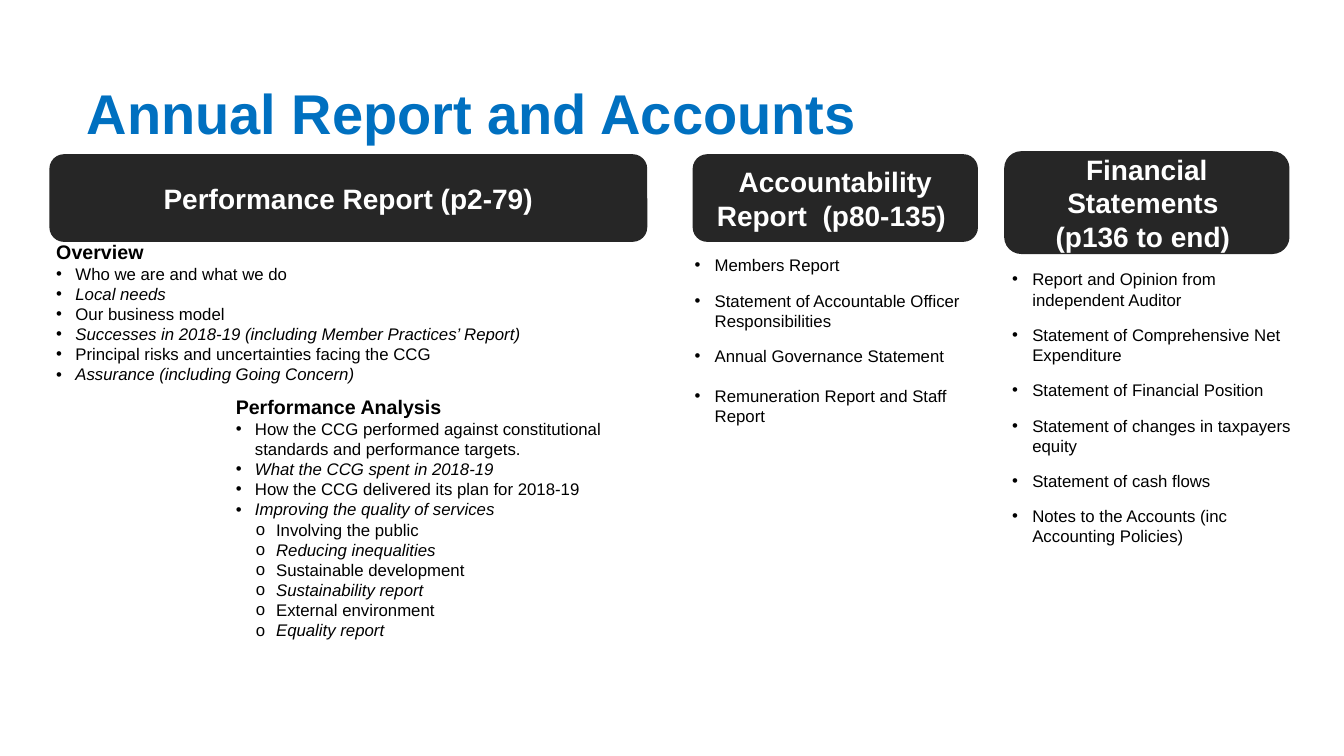
from pptx import Presentation
from pptx.dml.color import RGBColor
from pptx.enum.shapes import MSO_SHAPE
from pptx.enum.text import MSO_ANCHOR, MSO_AUTO_SIZE, PP_ALIGN
from pptx.oxml.ns import qn
from pptx.util import Inches, Pt
from lxml import etree

BLUE = RGBColor(0x00, 0x70, 0xC0)
DARK = RGBColor(0x26, 0x26, 0x26)
WHITE = RGBColor(0xFF, 0xFF, 0xFF)
BLACK = RGBColor(0x00, 0x00, 0x00)

TITLE = "Annual Report and Accounts"
TITLE_BOX = (0.76, 0.73, 8.73, 0.77)

HEADERS = [
    ((0.49, 1.53, 5.93, 0.87), ["Performance Report (p2-79)"]),
    ((6.87, 1.53, 2.83, 0.87), ["Accountability Report  (p80-135) "]),
    ((9.96, 1.5, 2.83, 1.02), ["Financial Statements ", "(p136 to end) "]),
]

HEAD = {"size": Pt(14), "bold": True}
PLAIN = {"size": Pt(12)}
ITALIC = {"size": Pt(12), "italic": True}

BULLETS = {
    "none": None,
    "dot": ("•", 0.19, 0.19),
    "circle": ("o", 0.4, 0.2),
    "wide": ("•", 0.2, 0.2),
}
GAP, LAST_GAP = 10.8, 14.4

LISTS = [
    ((0.46, 2.33, 6.07, 1.75), [
        ("none", HEAD, 0, "Overview"),
        ("dot", PLAIN, 0, "Who we are and what we do"),
        ("dot", ITALIC, 0, "Local needs"),
        ("dot", PLAIN, 0, "Our business model"),
        ("dot", ITALIC, 0, "Successes in 2018-19 (including Member Practices’ Report)"),
        ("dot", PLAIN, 0, "Principal risks and uncertainties facing the CCG"),
        ("dot", ITALIC, 0, "Assurance (including Going Concern)"),
    ]),
    ((6.79, 2.48, 3.1, 1.82), [
        ("wide", PLAIN, 0, "Members Report"),
        ("wide", PLAIN, GAP, "Statement of Accountable Officer Responsibilities"),
        ("wide", PLAIN, GAP, "Annual Governance Statement"),
        ("wide", PLAIN, LAST_GAP, "Remuneration Report and Staff Report"),
    ]),
    ((9.94, 2.62, 3.12, 2.88), [
        ("wide", PLAIN, 0, "Report and Opinion from independent Auditor"),
        ("wide", PLAIN, GAP, "Statement of Comprehensive Net Expenditure"),
        ("wide", PLAIN, GAP, "Statement of Financial Position"),
        ("wide", PLAIN, GAP, "Statement of changes in taxpayers equity"),
        ("wide", PLAIN, GAP, "Statement of cash flows"),
        ("wide", PLAIN, GAP, "Notes to the Accounts (inc Accounting Policies)"),
    ]),
    ((2.24, 3.87, 4.47, 2.56), [
        ("none", HEAD, 0, "Performance Analysis"),
        ("dot", PLAIN, 0, "How the CCG performed against constitutional standards and performance targets."),
        ("dot", ITALIC, 0, "What the CCG spent in 2018-19"),
        ("dot", PLAIN, 0, "How the CCG delivered its plan for 2018-19"),
        ("dot", ITALIC, 0, "Improving the quality of services"),
        ("circle", PLAIN, 0, "Involving the public"),
        ("circle", ITALIC, 0, "Reducing inequalities"),
        ("circle", PLAIN, 0, "Sustainable development"),
        ("circle", ITALIC, 0, "Sustainability report"),
        ("circle", PLAIN, 0, "External environment"),
        ("circle", ITALIC, 0, "Equality report"),
    ]),
]


def set_attrs(obj, values):
    """Set every attribute named in a dict."""
    for name, value in values.items():
        setattr(obj, name, value)


def add_run(p, text, color, values):
    """Add one Arial run to a paragraph."""
    r = p.add_run()
    r.text = text
    set_attrs(r.font, {"name": "Arial", **values})
    r.font.color.rgb = color


def add_bullet(p, char, indent, hang):
    """Give a paragraph a bullet with a hanging indent."""
    pPr = p._p.get_or_add_pPr()
    pPr.set("marL", str(Inches(indent)))
    pPr.set("indent", str(-Inches(hang)))
    etree.SubElement(pPr, qn("a:buFont")).set("typeface", "Arial")
    etree.SubElement(pPr, qn("a:buChar")).set("char", char)


def add_header(slide, box, lines):
    """Add a dark rounded heading."""
    sp = slide.shapes.add_shape(MSO_SHAPE.ROUNDED_RECTANGLE, *map(Inches, box))
    sp.shadow.inherit = False
    sp.fill.solid()
    sp.fill.fore_color.rgb = DARK
    sp.line.fill.background()
    tf = sp.text_frame
    set_attrs(tf, {"word_wrap": True, "vertical_anchor": MSO_ANCHOR.MIDDLE})
    for i, line in enumerate(lines):
        p = tf.add_paragraph() if i else tf.paragraphs[0]
        p.alignment = PP_ALIGN.CENTER
        add_run(p, line, WHITE, {"size": Pt(20), "bold": True})


def add_list(slide, box, items):
    """Add a text box of headings and bulleted items."""
    tf = slide.shapes.add_textbox(*map(Inches, box)).text_frame
    tf.word_wrap = True
    for i, (kind, style, gap, text) in enumerate(items):
        p = tf.add_paragraph() if i else tf.paragraphs[0]
        if gap:
            p.space_before = Pt(gap)
        if BULLETS[kind]:
            add_bullet(p, *BULLETS[kind])
        add_run(p, text, BLACK, style)


def main():
    """Build and save the slide."""
    prs = Presentation()
    set_attrs(prs, {"slide_width": Inches(13.33), "slide_height": Inches(7.5)})
    slide = prs.slides.add_slide(prs.slide_layouts[5])
    title = slide.shapes.title
    set_attrs(title, dict(zip(("left", "top", "width", "height"), map(Inches, TITLE_BOX))))
    tf = title.text_frame
    set_attrs(tf, {"word_wrap": True, "auto_size": MSO_AUTO_SIZE.NONE,
                   "vertical_anchor": MSO_ANCHOR.TOP})
    p = tf.paragraphs[0]
    p.alignment = PP_ALIGN.LEFT
    add_run(p, TITLE, BLUE, {"size": Pt(40), "bold": True})
    for box, lines in HEADERS:
        add_header(slide, box, lines)
    for box, items in LISTS:
        add_list(slide, box, items)
    prs.save("out.pptx")


if __name__ == "__main__":
    main()
